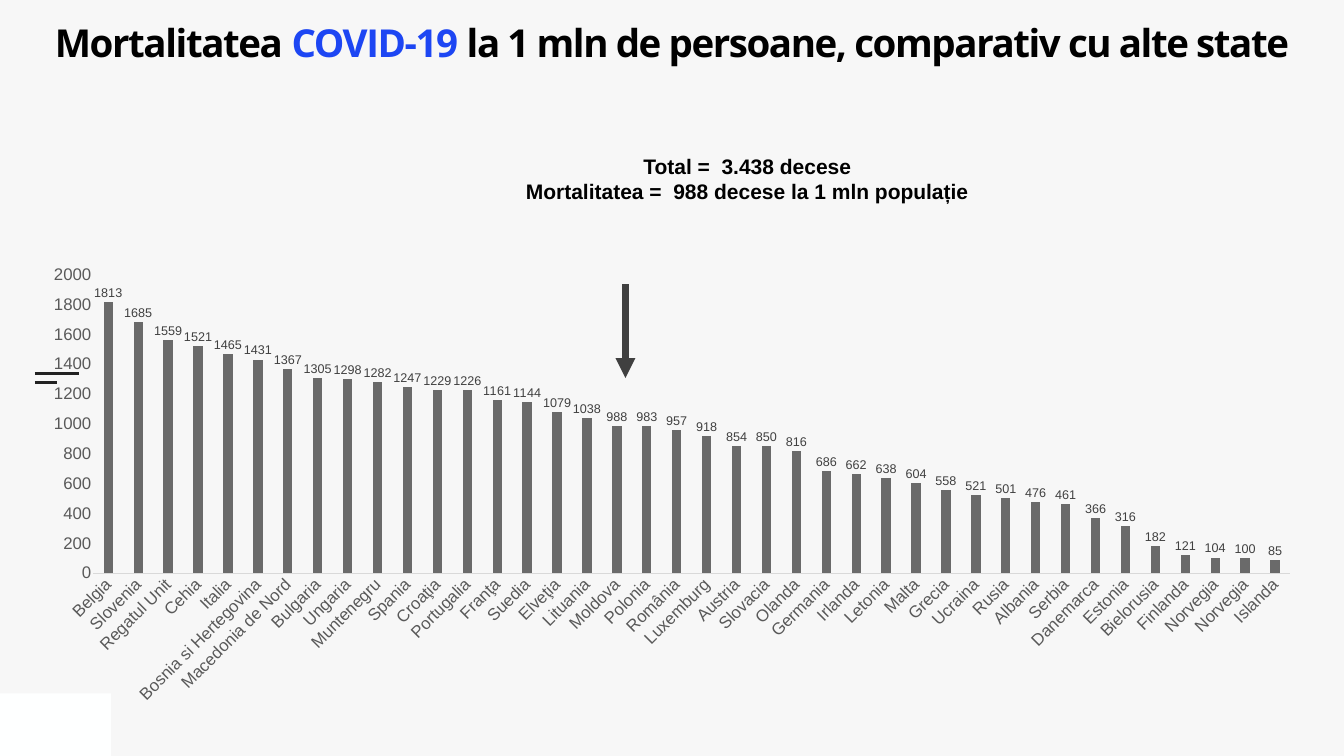
from typing import NamedTuple

from lxml.etree import SubElement
from pptx import Presentation
from pptx.chart.data import CategoryChartData
from pptx.dml.color import RGBColor
from pptx.enum.chart import XL_CHART_TYPE as CT, XL_LABEL_POSITION as LP, XL_TICK_MARK as TM
from pptx.enum.shapes import MSO_CONNECTOR as MC, MSO_SHAPE as MS
from pptx.enum.text import MSO_ANCHOR as MA, PP_ALIGN as PA
from pptx.oxml.ns import qn
from pptx.util import Pt

PX = 9144
BG = RGBColor(0xF7, 0xF7, 0xF7)
WHITE = RGBColor(0xFE, 0xFF, 0xFF)
BLACK = RGBColor(0, 0, 0)
BLUE = RGBColor(0x1D, 0x46, 0xF3)
INK = RGBColor(0x22, 0x22, 0x22)
DARK = RGBColor(0x40, 0x40, 0x40)
BAR = RGBColor(0x6A, 0x6A, 0x6A)
LABEL = RGBColor(0x59, 0x59, 0x59)
AXIS = RGBColor(0xD9, 0xD9, 0xD9)


class Box(NamedTuple):
    x: int
    y: int
    w: int
    h: int

    def emu(self) -> tuple:
        return tuple(v * PX for v in self)


class Line(NamedTuple):
    x1: int
    y1: int
    x2: int
    y2: int
    width: float
    color: RGBColor
    arrow: bool = False


class Run(NamedTuple):
    text: str
    color: RGBColor = BLACK


class Country(NamedTuple):
    name: str
    deaths: int


MENU_LINES = [Line(69, 741, 157, 741, 3, INK), Line(69, 759, 113, 759, 3, INK)]
MOLDOVA_ARROW = Line(1241, 564, 1241, 750, 9.5, DARK, True)
TITLE = [[Run("Mortalitatea "), Run("COVID-19", BLUE),
          Run(" la 1 mln de persoane, comparativ cu alte state")]]
SUMMARY = [[Run("Total =  3.438 decese")],
           [Run("Mortalitatea =  988 decese la 1 mln populație")]]
COUNTRIES = [
    Country("Belgia", 1813), Country("Slovenia", 1685), Country("Regatul Unit", 1559),
    Country("Cehia", 1521), Country("Italia", 1465), Country("Bosnia si Hertegovina", 1431),
    Country("Macedonia de Nord", 1367), Country("Bulgaria", 1305), Country("Ungaria", 1298),
    Country("Muntenegru", 1282), Country("Spania", 1247), Country("Croaţia", 1229),
    Country("Portugalia", 1226), Country("Franţa", 1161), Country("Suedia", 1144),
    Country("Elveţia", 1079), Country("Lituania", 1038), Country("Moldova", 988),
    Country("Polonia", 983), Country("România", 957), Country("Luxemburg", 918),
    Country("Austria", 854), Country("Slovacia", 850), Country("Olanda", 816),
    Country("Germania", 686), Country("Irlanda", 662), Country("Letonia", 638),
    Country("Malta", 604), Country("Grecia", 558), Country("Ucraina", 521),
    Country("Rusia", 501), Country("Albania", 476), Country("Serbia", 461),
    Country("Danemarca", 366), Country("Estonia", 316), Country("Bielorusia", 182),
    Country("Finlanda", 121), Country("Norvegia", 104), Country("Norvegia", 100),
    Country("Islanda", 85),
]


def set_font(font, size: float, color: RGBColor, name: str = "Arial") -> None:
    font.size, font.name = Pt(size), name
    font.color.rgb = color


def add_line(slide, line: Line) -> None:
    c = slide.shapes.add_connector(
        MC.STRAIGHT, line.x1 * PX, line.y1 * PX, line.x2 * PX, line.y2 * PX)
    c.line.width = Pt(line.width)
    c.line.color.rgb = line.color
    if line.arrow:
        SubElement(c.line._get_or_add_ln(), qn("a:tailEnd"), type="triangle")
    SubElement(c._element.spPr, qn("a:effectLst"))


def add_text(slide, box: Box, lines: list[list[Run]], size: int, name: str, margin: int = 0,
             anchor=MA.TOP, tracking: int = 0, spacing: float = 1.0) -> None:
    tf = slide.shapes.add_textbox(*box.emu()).text_frame
    tf.word_wrap = True
    tf.vertical_anchor = anchor
    tf.margin_left = tf.margin_right = tf.margin_top = tf.margin_bottom = margin * PX
    for i, runs in enumerate(lines):
        p = tf.add_paragraph() if i else tf.paragraphs[0]
        p.alignment = PA.CENTER
        p.line_spacing = spacing
        for run in runs:
            r = p.add_run()
            r.text = run.text
            set_font(r.font, size, run.color, name)
            r.font.bold = True
            if tracking:
                r.font._element.set("spc", str(tracking))


def add_mortality_chart(slide, box: Box, countries: list[Country]) -> None:
    data = CategoryChartData()
    data.categories = [c.name for c in countries]
    data.add_series("Series 1", [c.deaths for c in countries])
    chart = slide.shapes.add_chart(CT.COLUMN_CLUSTERED, *box.emu(), data).chart
    chart.has_legend = chart.has_title = False
    set_font(chart.font, 24, BLACK)

    plot = chart.plots[0]
    plot.gap_width, plot.overlap = 219, -27
    plot.vary_by_categories = False
    series = plot.series[0]
    series.format.fill.solid()
    series.format.fill.fore_color.rgb = BAR
    labels = series.data_labels
    labels.show_value = True
    labels.position = LP.OUTSIDE_END
    set_font(labels.font, 18, DARK)

    cat, val = chart.category_axis, chart.value_axis
    for axis in (cat, val):
        axis.has_major_gridlines = False
        axis.major_tick_mark = axis.minor_tick_mark = TM.NONE
        set_font(axis.tick_labels.font, 24, LABEL)
    cat.format.line.color.rgb = AXIS
    cat.format.line.width = Pt(0.75)
    cat._element.find(qn("c:txPr")).find(qn("a:bodyPr")).set("rot", "-2700000")
    val.format.line.fill.background()
    val.minimum_scale, val.maximum_scale, val.major_unit = 0, 2000, 200


def main() -> None:
    """Build the COVID-19 mortality slide."""
    prs = Presentation()
    prs.slide_width, prs.slide_height = 2667 * PX, 1500 * PX
    s = prs.slides.add_slide(prs.slide_layouts[6])
    s.background.fill.solid()
    s.background.fill.fore_color.rgb = BG

    sp = s.shapes.add_shape(MS.RECTANGLE, *Box(0, 1376, 220, 124).emu())
    sp.shadow.inherit = False
    sp.fill.solid()
    sp.fill.fore_color.rgb = WHITE
    sp.line.fill.background()

    for line in MENU_LINES:
        add_line(s, line)
    add_text(s, Box(0, 45, 2667, 158), TITLE, 55, "Open Sans", tracking=-200, spacing=0.95)
    add_line(s, MOLDOVA_ARROW)
    add_text(s, Box(1016, 299, 934, 112), SUMMARY, 30, "Arial", margin=6, anchor=MA.MIDDLE)
    add_mortality_chart(s, Box(56, 508, 2555, 907), COUNTRIES)
    prs.save("out.pptx")


if __name__ == "__main__":
    main()
